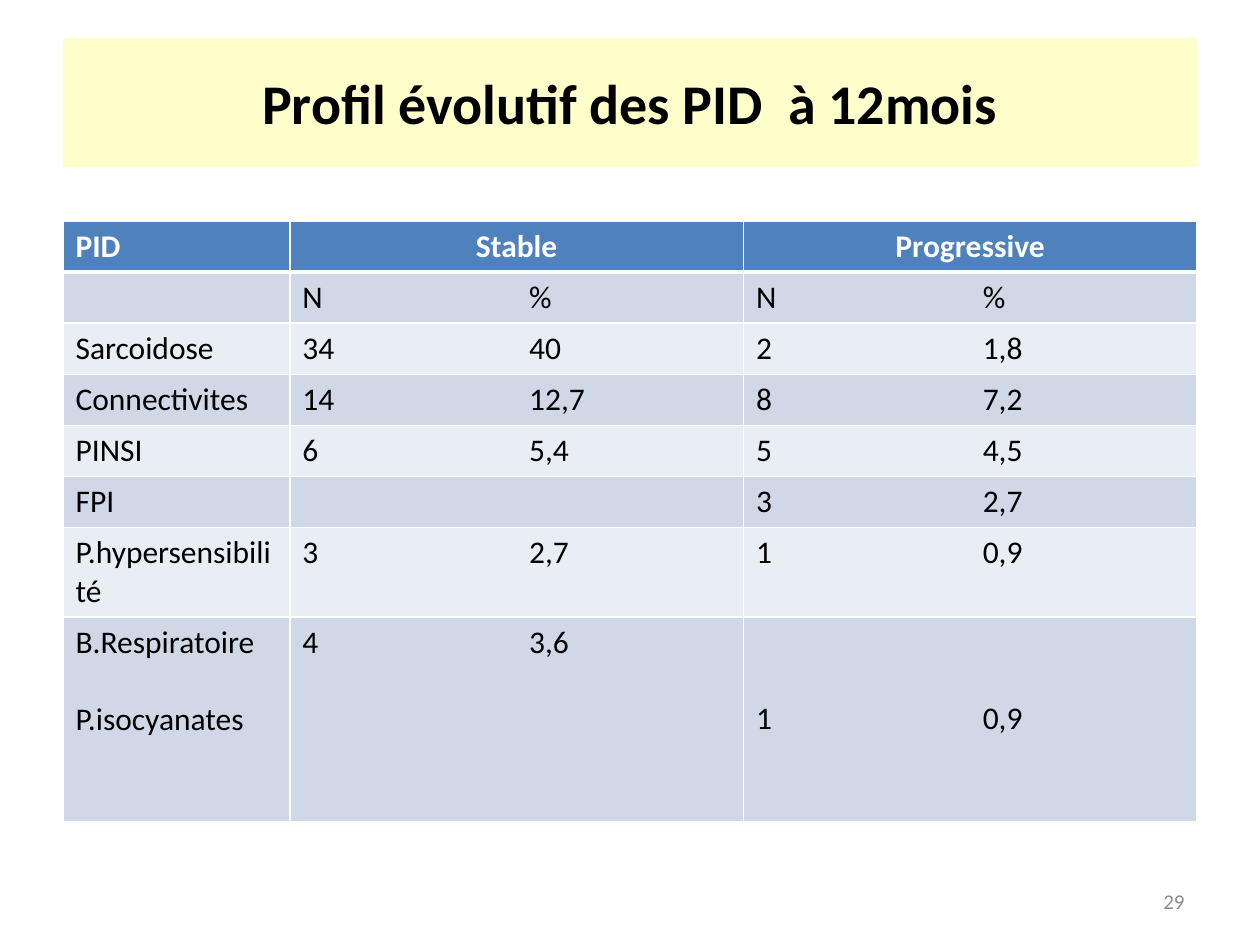
from lxml.etree import SubElement
from pptx import Presentation
from pptx.dml.color import RGBColor
from pptx.enum.shapes import MSO_SHAPE
from pptx.enum.text import MSO_ANCHOR as Anchor, PP_ALIGN as Align
from pptx.oxml.ns import qn
from pptx.util import Emu, Pt

PX = 914400 / 126
FONT = "Calibri"
BLACK = RGBColor(0x00, 0x00, 0x00)
WHITE = RGBColor(0xFF, 0xFF, 0xFF)
GRAY = RGBColor(0x8C, 0x8C, 0x8C)
CREAM = RGBColor(0xFF, 0xFF, 0xCC)
HEADER_BLUE = RGBColor(0x4F, 0x81, 0xBD)
BAND_DARK = RGBColor(0xD0, 0xD8, 0xE8)
BAND_LIGHT = RGBColor(0xE9, 0xED, 0xF4)

LINE_PX = 38
ROW_HEIGHTS = [51] * 6 + [89, 205]
ROWS = [
    ["PID", "Stable", "", "Progressive", ""],
    ["", "N", "%", "N", "%"],
    ["Sarcoidose", "34", "40", "2", "1,8"],
    ["Connectivites", "14", "12,7", "8", "7,2"],
    ["PINSI", "6", "5,4", "5", "4,5"],
    ["FPI", "", "", "3", "2,7"],
    ["P.hypersensibilité", "3", "2,7", "1", "0,9"],
    ["B.Respiratoire\nP.isocyanates", "4", "3,6", "1", "0,9"],
]


def px(length):
    """Turn pixels into EMU."""
    return Emu(round(length * PX))


def style(para, size, color, bold=False, align=Align.LEFT):
    """Set the font and alignment of a paragraph."""
    para.alignment = align
    font = para.font
    font.name, font.size, font.bold = FONT, Pt(size), bold
    font.color.rgb = color


def set_border(cell, side, width):
    """Draw one white cell border, or none when the width is zero."""
    line = SubElement(cell._tc.get_or_add_tcPr(), qn(f"a:ln{side}"), w=str(Pt(width)))
    if width:
        fill = SubElement(line, qn("a:solidFill"))
        SubElement(fill, qn("a:srgbClr"), val=str(WHITE))
    else:
        SubElement(line, qn("a:noFill"))


def add_title(page, left, top, width, height):
    """Place the title banner."""
    box = page.shapes.add_shape(MSO_SHAPE.RECTANGLE, px(left), px(top), px(width), px(height))
    box.shadow.inherit = False
    box.fill.solid()
    box.fill.fore_color.rgb = CREAM
    box.line.fill.background()
    frame = box.text_frame
    frame.word_wrap = True
    frame.vertical_anchor = Anchor.MIDDLE
    frame.text = "Profil évolutif des PID  à 12mois"
    style(frame.paragraphs[0], 32, BLACK, True, Align.CENTER)


def fill_cell(cell, text, row, column):
    """Write one table cell with its borders and fill."""
    header = row == 0
    paired = not header and column > 0
    widths = {
        "L": 0 if paired and column % 2 == 0 else 1,
        "R": 0 if paired and column % 2 == 1 else 1,
        "T": 3 if row == 1 else 1,
        "B": 3 if header else 1,
    }
    for side, width in widths.items():
        set_border(cell, side, width)
    cell.fill.solid()
    cell.fill.fore_color.rgb = HEADER_BLUE if header else (BAND_LIGHT, BAND_DARK)[row % 2]
    cell.text = text
    for index, para in enumerate(cell.text_frame.paragraphs):
        style(para, 18, WHITE if header else BLACK, header,
              Align.CENTER if header and column else Align.LEFT)
        if index:
            para.space_before = Pt(22)


def add_outcome_table(page, left, top, width):
    """Place the table of outcomes by disease."""
    frame = page.shapes.add_table(len(ROWS), len(ROWS[0]), px(left), px(top),
                                  px(width), px(sum(ROW_HEIGHTS)))
    table = frame.table
    for column in table.columns:
        column.width = px(width / len(ROWS[0]))
    for row, (texts, height) in enumerate(zip(ROWS, ROW_HEIGHTS)):
        table.rows[row].height = px(height)
        for column, text in enumerate(texts):
            fill_cell(table.cell(row, column), text, row, column)
    for column in (1, 3):
        table.cell(0, column).merge(table.cell(0, column + 1))
    for column in (3, 4):
        table.cell(len(ROWS) - 1, column).margin_top = px(6 + 2 * LINE_PX)


def add_page_number(page, left, top, width, height):
    """Place the page number."""
    box = page.shapes.add_textbox(px(left), px(top), px(width), px(height))
    frame = box.text_frame
    frame.word_wrap = True
    frame.vertical_anchor = Anchor.MIDDLE
    frame.text = "29"
    style(frame.paragraphs[0], 12, GRAY, align=Align.RIGHT)


def main():
    """Build the slide and save it."""
    deck = Presentation()
    deck.slide_width, deck.slide_height = px(1260), px(945)
    page = deck.slides.add_slide(deck.slide_layouts[6])
    add_title(page, 63, 38, 1134, 129)
    add_outcome_table(page, 63, 221, 1134)
    add_page_number(page, 903, 876, 294, 50)
    deck.save("out.pptx")


if __name__ == "__main__":
    main()
